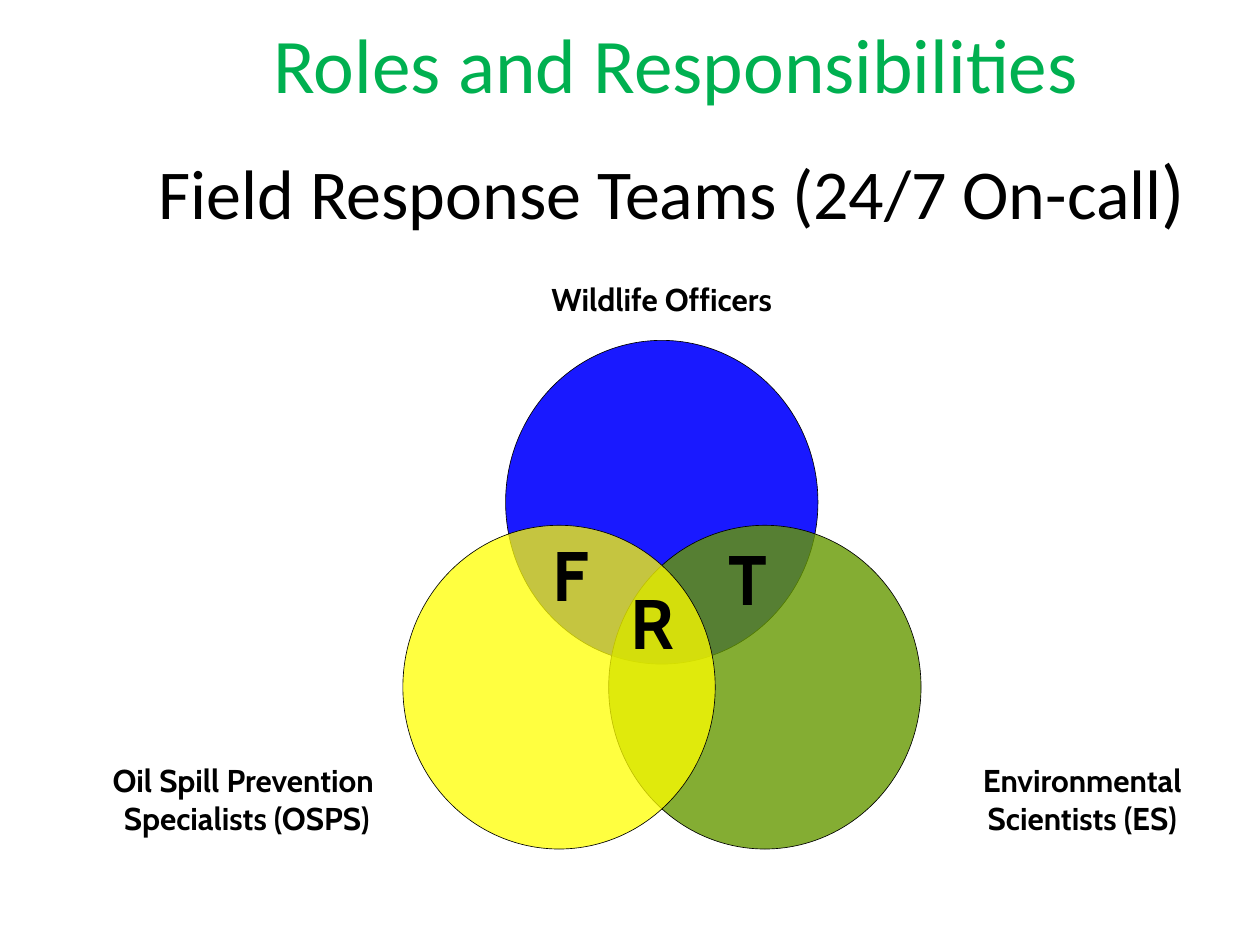
from pptx import Presentation
from pptx.dml.color import RGBColor
from pptx.enum.shapes import MSO_SHAPE as SHAPE
from pptx.enum.text import MSO_ANCHOR as ANCHOR, PP_ALIGN as ALIGN
from pptx.oxml.ns import qn
from pptx.util import Pt
from lxml import etree


def color(value):
    return RGBColor.from_string(value)


def add_text(x, y, w, h, lines, size, font, fill="000000", bold=False,
             align=ALIGN.CENTER, anchor=ANCHOR.TOP, wrap=True):
    tb = s.shapes.add_textbox(Pt(x), Pt(y), Pt(w), Pt(h))
    tf = tb.text_frame
    tf.word_wrap = wrap
    tf.vertical_anchor = anchor
    tf.text = lines
    for p in tf.paragraphs:
        p.alignment = align
        for r in p.runs:
            r.font.size = Pt(size)
            r.font.name = font
            r.font.bold = bold
            r.font.color.rgb = color(fill)
    return tf


prs = Presentation()
prs.slide_width, prs.slide_height = Pt(720), Pt(540)
s = prs.slides.add_slide(prs.slide_layouts[6])

add_text(86.4, 6, 600, 60, "Roles and Responsibilities", 44.1, "Calibri",
         "00B050", anchor=ANCHOR.MIDDLE)

W, H, LABEL_H = 178.5, 185, 46
teams = [
    (288.9, 194.5, "0000FF", 90, 288.9, 147.8, "Wildlife Officers"),
    (347.8, 300.2, "669900", 80, 529.2, 433.5, "Environmental\nScientists (ES)"),
    (230.2, 300.2, "FFFF00", 75, 51.8, 433.5,
     "Oil Spill Prevention \nSpecialists (OSPS)"),
]
for x, y, fill, alpha, label_x, label_y, label in teams:
    sp = s.shapes.add_shape(SHAPE.OVAL, Pt(x), Pt(y), Pt(W), Pt(H))
    sp.shadow.inherit = False
    sp.fill.solid()
    sp.fill.fore_color.rgb = color(fill)
    clr = sp.fill._xPr.find(qn("a:solidFill"))[0]
    etree.SubElement(clr, qn("a:alpha")).set("val", str(alpha * 1000))
    sp.line.color.rgb = color("000000")
    sp.line.width = Pt(0.37)
    add_text(label_x, label_y, W, LABEL_H, label, 18, "Cabin", bold=True,
             anchor=ANCHOR.MIDDLE, wrap=False)

for letter, x, y, w in [("F", 308.9, 300.2, 33.8), ("R", 353.5, 327.6, 45.4),
                        ("T", 409, 302.4, 35.3)]:
    add_text(x, y, w, 55.4, letter, 40, "Cabin", bold=True, align=ALIGN.LEFT)

tf = add_text(72, 77.8, 624, 60.5, "Field Response Teams (24/7 On-call", 40, "Calibri")
r = tf.paragraphs[0].add_run()
r.text = ")"
r.font.size = Pt(44)
r.font.name = "Calibri"
r.font.color.rgb = color("000000")

prs.save("out.pptx")
